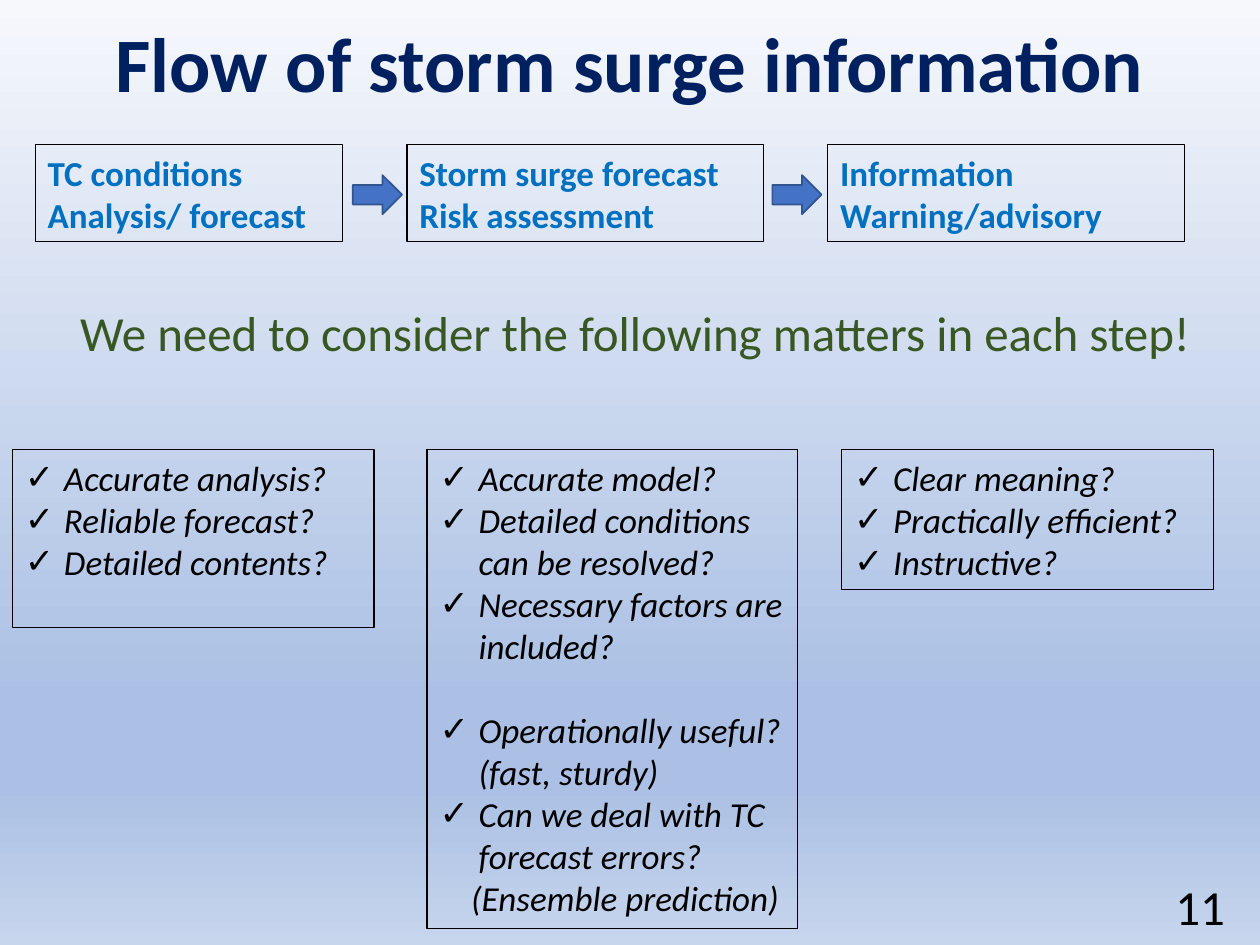
from lxml import etree
from pptx import Presentation
from pptx.dml.color import RGBColor as Rgb
from pptx.enum.shapes import MSO_SHAPE as Shape
from pptx.enum.text import MSO_ANCHOR as Anchor, PP_ALIGN as Align
from pptx.oxml.ns import qn
from pptx.util import Inches, Pt

HUES = {
    "navy": "002060", "blue": "0070C0", "green": "385723", "black": "000000",
    "arrow": "4472C4", "edge": "325491",
}
SKY = [(0, "F6F8FC"), (74, "ABC0E4"), (83, "ABC0E4"), (100, "C7D5ED")]
HANG = Inches(0.31)

deck = Presentation()
deck.slide_width, deck.slide_height = Inches(10), Inches(7.5)
COL, ROW = deck.slide_width / 100, deck.slide_height / 75
slide = deck.slides.add_slide(deck.slide_layouts[5])


def grid(x, y, w, h):
    return round(x * COL), round(y * ROW), round(w * COL), round(h * ROW)


def write(frame, lines, size, hue, align=Align.LEFT, bold=False, italic=False):
    frame.word_wrap = True
    for i, line in enumerate(lines):
        para = frame.paragraphs[0] if i == 0 else frame.add_paragraph()
        para.alignment = align
        run = para.add_run()
        run.text = line
        font = run.font
        font.name, font.size, font.bold, font.italic = "Calibri", Pt(size), bold, italic
        font.color.rgb = Rgb.from_string(HUES[hue])
    return frame.paragraphs


back = slide.background.fill
back.gradient()
back.gradient_angle = 270
stops = slide.element.find(".//" + qn("a:gsLst"))
for old in list(stops):
    stops.remove(old)
for spot, tint in SKY:
    stop = etree.SubElement(stops, qn("a:gs"), pos=str(spot * 1000))
    etree.SubElement(stop, qn("a:srgbClr"), val=tint)

title = slide.shapes.title
title.left, title.top, title.width, title.height = grid(5, 0, 90, 10.7)
title.text_frame.vertical_anchor = Anchor.MIDDLE
head = write(title.text_frame, ["Flow of storm surge information"], 44, "navy", Align.CENTER, bold=True)
head[0].line_spacing = 0.9

STEPS = [
    (2.8, 24.4, ["TC conditions", "Analysis/ forecast"]),
    (32.3, 28.3, ["Storm surge forecast", "Risk assessment"]),
    (65.7, 28.3, ["Information", "Warning/advisory"]),
]
CHECKS = [
    (1, 28.7, 14.1, ["Accurate analysis?", "Reliable forecast?", "Detailed contents?"]),
    (33.9, 29.4, 38, [
        "Accurate model?", "Detailed conditions can be resolved?",
        "Necessary factors are included?", "Operationally useful?", "(fast, sturdy)",
        "Can we deal with TC forecast errors?", "(Ensemble prediction)",
    ]),
    (66.8, 29.5, 11.1, ["Clear meaning?", "Practically efficient?", "Instructive?"]),
]
boxes = [(x, 11.5, w, 7.7, lines, False) for x, w, lines in STEPS]
boxes += [(x, 35.7, w, h, lines, True) for x, w, h, lines in CHECKS]

for x, y, w, h, lines, check in boxes:
    box = slide.shapes.add_textbox(*grid(x, y, w, h))
    box.line.color.rgb = Rgb.from_string(HUES["black"])
    box.line.width = Pt(0.75)
    hue = "black" if check else "blue"
    paras = write(box.text_frame, lines, 20, hue, bold=not check, italic=check)
    if not check:
        continue
    for para in paras:
        props = para._p.get_or_add_pPr()
        if para.text.startswith("("):
            props.set("marL", str(HANG if "fast" in para.text else Inches(0.25)))
            continue
        props.set("marL", str(HANG))
        props.set("indent", str(-HANG))
        if para.text.startswith("Operationally"):
            para.space_before = Pt(24)
        etree.SubElement(props, qn("a:buFont"), typeface="Arial")
        etree.SubElement(props, qn("a:buChar"), char="✓")

for x in (28, 61.3):
    arrow = slide.shapes.add_shape(Shape.RIGHT_ARROW, *grid(x, 13.9, 3.9, 3.1))
    arrow.shadow.inherit = False
    arrow.fill.solid()
    arrow.fill.fore_color.rgb = Rgb.from_string(HUES["arrow"])
    arrow.line.color.rgb = Rgb.from_string(HUES["edge"])
    arrow.line.width = Pt(1)

note = slide.shapes.add_textbox(*grid(4.4, 23.5, 92, 5.7))
write(note.text_frame, ["We need to consider the following matters in each step!"], 28, "green", Align.CENTER)

page = slide.shapes.add_textbox(*grid(75.7, 69.9, 22.5, 4))
page.text_frame.vertical_anchor = Anchor.MIDDLE
write(page.text_frame, ["11"], 28, "black", Align.RIGHT)

deck.save("out.pptx")
